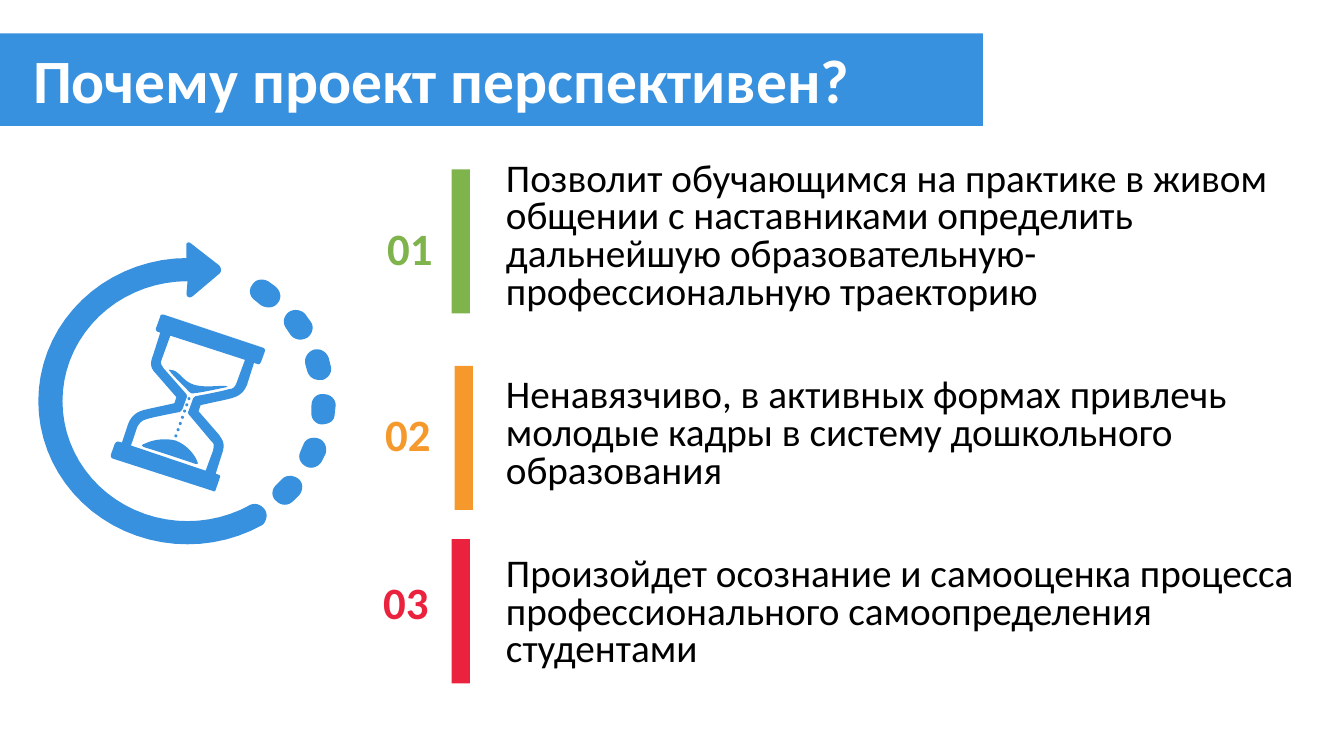
from math import cos, radians, sin

from pptx import Presentation
from pptx import util as u
from pptx.dml.color import RGBColor
from pptx.enum import shapes, text

PX = 9144
FONT = "Calibri"
BLUE, WHITE, BLACK = "3891DE", "FFFFFF", "000000"

TITLE = "Почему проект перспективен?"
REASONS = [
    "Позволит обучающимся на практике в живом общении с наставниками определить "
    "дальнейшую образовательную-профессиональную траекторию",
    "Ненавязчиво, в активных формах привлечь молодые кадры в систему дошкольного образования",
    "Произойдет осознание и самооценка процесса профессионального самоопределения студентами",
]
MARKERS = [
    ("01", "7FB34C", (371, 214), (448, 168)),
    ("02", "F5992D", (369, 399), (451, 363)),
    ("03", "EB223D", (367, 565), (448, 535)),
]

# Outline steps: two numbers make a straight line, six make a cubic curve.
GLASS_OUTER = [
    (230, 395), (233, 394, 241, 392, 245, 382), (252, 360), (255, 361),
    (257, 362, 258, 361, 259, 359), (263, 348), (263, 347, 262, 345, 261, 345),
    (162, 312), (161, 312, 159, 312, 159, 314), (155, 325),
    (154, 327, 155, 328, 156, 329), (159, 330), (152, 352),
    (148, 362, 150, 366, 155, 371), (175, 394), (173, 400),
    (165, 402, 145, 406, 142, 407), (139, 408, 131, 410, 127, 421),
    (121, 439), (117, 438), (116, 438, 115, 439, 114, 440), (110, 451),
    (110, 453, 110, 454, 112, 455), (211, 487), (212, 488, 214, 487, 214, 486),
    (218, 474), (219, 473, 218, 471, 217, 471), (214, 470), (220, 451),
    (224, 440, 221, 437, 217, 431), (197, 408), (199, 402),
    (207, 400, 227, 396, 230, 395),
]
GLASS_INNER = [
    (188, 412), (209, 437), (211, 439, 212, 440, 212, 441),
    (212, 442, 212, 445, 211, 448), (204, 467), (130, 442), (136, 424),
    (139, 418, 142, 417, 145, 416), (147, 415, 166, 411, 177, 409),
    (179, 409, 180, 407, 181, 406), (185, 395), (186, 393, 185, 391, 184, 390),
    (162, 365), (161, 363, 160, 362, 160, 361), (159, 360, 160, 358, 161, 355),
    (169, 333), (243, 357), (235, 379), (233, 385, 230, 386, 227, 386),
    (225, 387, 206, 391, 194, 393), (193, 394, 191, 395, 191, 397), (187, 408),
    (186, 409, 187, 411, 188, 412),
]
SAND = [
    [(193, 390), (198, 390, 225, 384, 225, 384), (225, 384, 227, 384, 224, 383),
     (218, 382, 206, 385, 193, 382), (180, 378, 178, 367, 169, 367),
     (167, 366, 167, 367, 169, 369), (170, 371, 185, 386, 187, 388),
     (189, 390, 190, 391, 193, 390)],
    [(144, 440), (141, 441, 139, 442, 144, 444), (148, 445, 188, 458, 193, 460),
     (198, 461, 196, 459, 195, 456), (192, 450, 185, 441, 174, 437),
     (162, 434, 150, 437, 144, 440)],
]
DASHES = [
    [(276, 300), (280, 295, 278, 288, 273, 284), (266, 279),
     (260, 276, 253, 277, 250, 283), (246, 288, 248, 295, 253, 298), (259, 303),
     (265, 306, 272, 306, 276, 300)],
    [(288, 332), (290, 335, 294, 337, 298, 337), (300, 337, 303, 336, 305, 335),
     (310, 331, 312, 324, 308, 319), (303, 312), (299, 307, 291, 306, 286, 310),
     (281, 314, 280, 321, 284, 326)],
    [(303, 362), (305, 369), (307, 374, 311, 377, 317, 377), (320, 377),
     (326, 375, 330, 369, 328, 363), (326, 355), (324, 349, 317, 345, 311, 347),
     (305, 349, 301, 356, 303, 362)],
    [(321, 391), (315, 390, 309, 395, 309, 402), (309, 409),
     (308, 415, 313, 421, 319, 421), (327, 421, 332, 417, 332, 411), (333, 402),
     (333, 396, 328, 391, 321, 391)],
    [(316, 435), (310, 433, 303, 435, 301, 441), (298, 448),
     (295, 454, 298, 460, 304, 463), (310, 466, 317, 462, 319, 458), (323, 450),
     (325, 444, 322, 437, 316, 435)],
    [(296, 475), (291, 471, 283, 471, 279, 476), (274, 481),
     (269, 486, 269, 493, 274, 497), (279, 502, 286, 502, 291, 497), (297, 491),
     (301, 486, 301, 479, 296, 475)],
]
ARROW_HEAD = [
    (185, 291), (185, 295, 188, 296, 191, 294), (217, 272),
    (220, 270, 220, 266, 217, 263), (190, 242), (187, 239, 184, 241, 185, 244),
    (185, 256),
]
ARROW_TAIL = [(264, 518, 266, 511, 263, 506), (259, 500, 252, 498, 246, 502)]
RING_CENTRE, RING_OUTER, RING_INNER = (186, 398), (148, 142), (124, 119)
GRAINS, GRAIN_SIZE, FIRST_GRAIN, LAST_GRAIN = 7, 3, (186, 394), (173, 431)


def colour(value):
    return RGBColor.from_string(value)


def arc(radii, start, end):
    turn = 5 if end > start else -5
    return [tuple(c + r * f(radians(a)) for c, r, f in zip(RING_CENTRE, radii, (cos, sin)))
            for a in range(start, end + turn, turn)]


def flatten(steps, pieces=8):
    points = []
    for step in steps:
        if len(step) == 2:
            points.append(step)
            continue
        ends = [points[-1], step[:2], step[2:4], step[4:]]
        for i in range(1, pieces + 1):
            t = i / pieces
            weights = ((1 - t) ** 3, 3 * t * (1 - t) ** 2, 3 * t * t * (1 - t), t ** 3)
            points.append(tuple(sum(w * p[axis] for w, p in zip(weights, ends))
                                for axis in (0, 1)))
    return [(round(x * PX), round(y * PX)) for x, y in points]


def paint(shape, fill):
    shape.shadow.inherit = False
    shape.fill.solid()
    shape.fill.fore_color.rgb = colour(fill)
    shape.line.fill.background()


def outline(*contours):
    first, *holes = map(flatten, contours)
    builder = slide.shapes.build_freeform(*first[0], scale=1.0)
    builder.add_line_segments(first[1:], close=True)
    for hole in holes:
        builder.move_to(*hole[0])
        builder.add_line_segments(hole[1:], close=True)
    paint(builder.convert_to_shape(), BLUE)


def preset(kind, left, top, width, height, fill):
    box = [round(v * PX) for v in (left, top, width, height)]
    paint(slide.shapes.add_shape(kind, *box), fill)


def write(lines, left, top, width, height, size, ink, bold=False, spacing=1.0, after=0,
          align=text.PP_ALIGN.LEFT, anchor=text.MSO_ANCHOR.TOP):
    frame = slide.shapes.add_textbox(*(v * PX for v in (left, top, width, height))).text_frame
    frame.word_wrap = True
    frame.vertical_anchor = anchor
    frame.text = "\n".join(lines)
    for paragraph in frame.paragraphs:
        paragraph.alignment = align
        paragraph.line_spacing = spacing
        paragraph.space_after = u.Pt(after)
        paragraph.font.name = FONT
        paragraph.font.size = u.Pt(size)
        paragraph.font.bold = bold
        paragraph.font.color.rgb = colour(ink)


deck = Presentation()
deck.slide_width, deck.slide_height = 1333 * PX, 750 * PX
slide = deck.slides.add_slide(deck.slide_layouts[6])

preset(shapes.MSO_SHAPE.RECTANGLE, -1, 33, 976, 92, BLUE)
write([TITLE], 23, 38, 857, 89, 44, WHITE, bold=True, spacing=0.9,
      anchor=text.MSO_ANCHOR.MIDDLE)
write(REASONS, 492, 156, 809, 521, 28, BLACK, spacing=0.8, after=47)

outline(GLASS_OUTER, GLASS_INNER)
for heap in SAND:
    outline(heap)
for i in range(GRAINS):
    x, y = (a + (b - a) * i / (GRAINS - 1) for a, b in zip(FIRST_GRAIN, LAST_GRAIN))
    preset(shapes.MSO_SHAPE.OVAL, x, y, GRAIN_SIZE, GRAIN_SIZE, BLUE)
outline(arc(RING_INNER, 60, 270) + ARROW_HEAD + arc(RING_OUTER, 270, 60) + ARROW_TAIL)
for dash in DASHES:
    outline(dash)

for number, tint, number_at, bar_at in MARKERS:
    preset(shapes.MSO_SHAPE.RECTANGLE, *bar_at, 18, 143, tint)
    write([number], *number_at, 68, 64, 32, tint, bold=True, align=text.PP_ALIGN.RIGHT)

deck.save("out.pptx")
